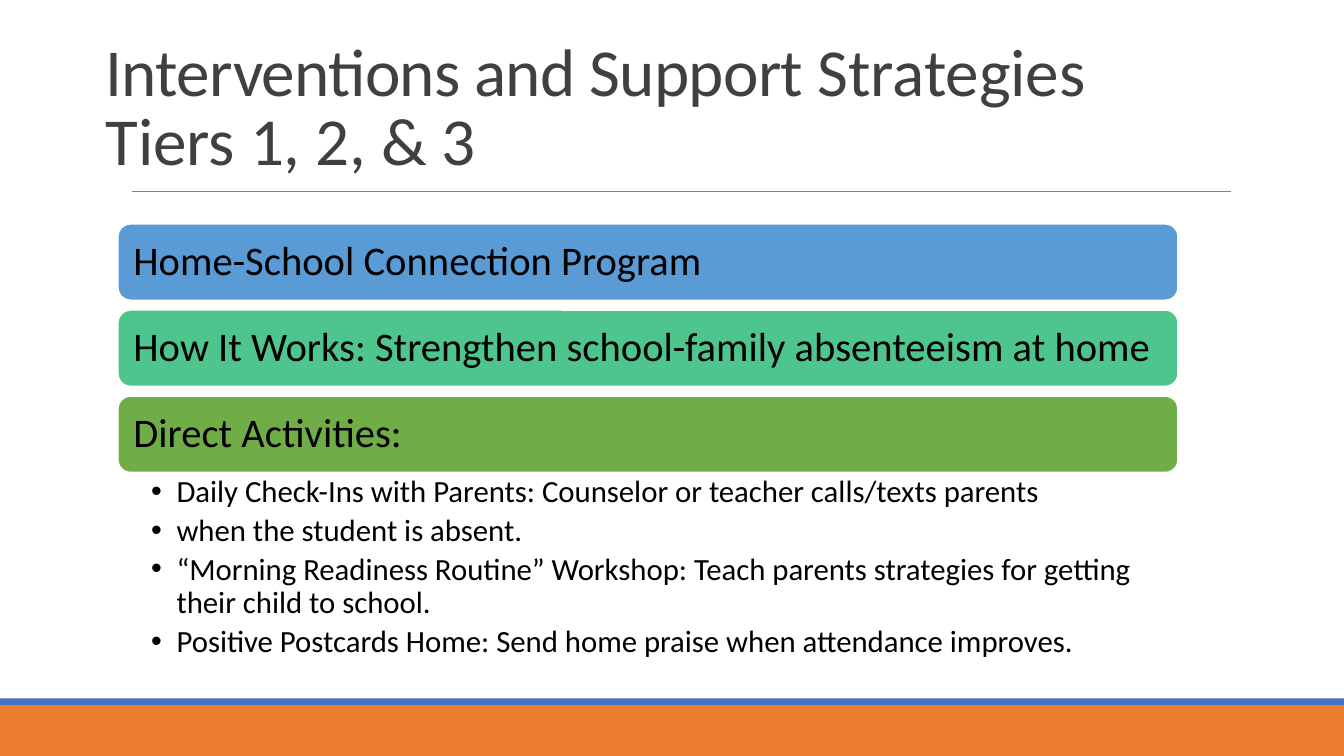
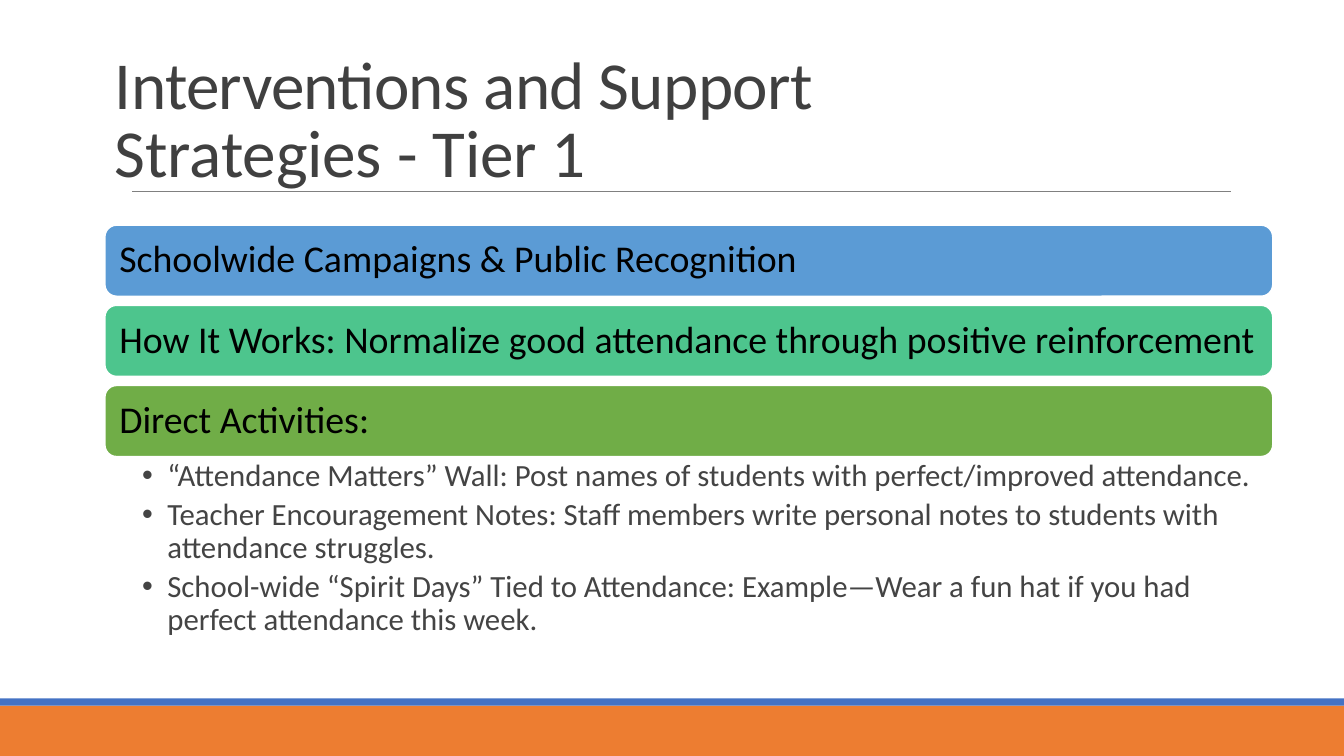
from dataclasses import dataclass

from lxml.etree import SubElement
from pptx import Presentation
from pptx.dml.color import RGBColor
from pptx.enum.shapes import MSO_CONNECTOR as Connector, MSO_SHAPE as Shape
from pptx.enum.text import MSO_ANCHOR as Anchor, MSO_AUTO_SIZE as AutoSize, PP_ALIGN as Align
from pptx.oxml.ns import qn
from pptx.util import Cm, Pt

BLACK = RGBColor(0x00, 0x00, 0x00)
WHITE = RGBColor(0xFF, 0xFF, 0xFF)
TITLE_GREY = RGBColor(0x40, 0x40, 0x40)
TEXT_GREY = RGBColor(0x44, 0x44, 0x44)
RULE_GREY = RGBColor(0x80, 0x80, 0x80)
ORANGE = RGBColor(0xED, 0x7D, 0x31)
BLUE = RGBColor(0x44, 0x72, 0xC4)
BAR_COLORS = (
    RGBColor(0x5B, 0x9B, 0xD5),
    RGBColor(0x4D, 0xC5, 0x8D),
    RGBColor(0x70, 0xAD, 0x47),
)
FONT = "Calibri"
PAGE_WIDTH, PAGE_HEIGHT = Cm(33.87), Cm(19.05)


@dataclass(frozen=True)
class Area:
    left: float
    top: float
    width: float
    height: float

    def lengths(self) -> tuple:
        return Cm(self.left), Cm(self.top), Cm(self.width), Cm(self.height)


@dataclass(frozen=True)
class Strategy:
    title_area: Area
    title_lead: str
    title_tail: str
    first_bar: Area
    bar_step: float
    bar_inset: float
    bar_size: int
    bars: tuple[str, ...]
    list_height: float
    list_inset: float
    list_color: RGBColor
    activities: tuple[str, ...]


STRATEGIES = (
    Strategy(
        title_area=Area(2.41, 0, 26.11, 5.56),
        title_lead="Interventions and Support ",
        title_tail="Strategies\nTiers 1, 2, & 3",
        first_bar=Area(2.97, 5.64, 26.72, 1.93),
        bar_step=2.17,
        bar_inset=0.3,
        bar_size=29,
        bars=(
            "Home-School Connection Program",
            "How It Works: Strengthen school-family absenteeism at home",
            "Direct Activities:",
        ),
        list_height=5,
        list_inset=0.84,
        list_color=BLACK,
        activities=(
            "Daily Check-Ins with Parents: Counselor or teacher calls/texts parents",
            "when the student is absent.",
            "“Morning Readiness Routine” Workshop: Teach parents strategies for getting "
            "their child to school.",
            "Positive Postcards Home: Send home praise when attendance improves.",
        ),
    ),
    Strategy(
        title_area=Area(2.64, 0.91, 26.54, 4.37),
        title_lead="Interventions and Support\n",
        title_tail="Strategies - Tier 1",
        first_bar=Area(2.64, 5.67, 29.44, 1.8),
        bar_step=2.02,
        bar_inset=0.28,
        bar_size=27,
        bars=(
            "Schoolwide Campaigns & Public Recognition",
            "How It Works: Normalize good attendance through positive reinforcement",
            "Direct Activities:",
        ),
        list_height=4.8,
        list_inset=0.94,
        list_color=TEXT_GREY,
        activities=(
            "“Attendance Matters” Wall: Post names of students with perfect/improved attendance.",
            "Teacher Encouragement Notes: Staff members write personal notes to students with "
            "attendance struggles.",
            "School-wide “Spirit Days” Tied to Attendance: Example—Wear a fun hat if you had "
            "perfect attendance this week.",
        ),
    ),
)


def add_text(para, text: str, *, size: int, color: RGBColor, tracking: int = 0) -> None:
    for index, line in enumerate(text.split("\n")):
        if index:
            para.add_line_break()
        if line:
            span = para.add_run()
            span.text = line
            span.font.name = FONT
            span.font.size = Pt(size)
            span.font.color.rgb = color
            if tracking:
                span.font._element.set("spc", str(tracking))


def add_bullet(para) -> None:
    properties = para._p.get_or_add_pPr()
    properties.set("marL", str(Cm(0.64)))
    properties.set("indent", str(Cm(-0.64)))
    SubElement(properties, qn("a:buFont")).set("typeface", "Arial")
    SubElement(properties, qn("a:buChar")).set("char", "•")


def add_block(page, kind: Shape, lengths: tuple, fill: RGBColor):
    block = page.shapes.add_shape(kind, *lengths)
    block.shadow.inherit = False
    block.fill.solid()
    block.fill.fore_color.rgb = fill
    block.line.fill.background()
    return block


def move_decor_to_layout(page) -> None:
    footer = add_block(page, Shape.RECTANGLE, (0, Cm(17.78), PAGE_WIDTH, Cm(1.27)), ORANGE)
    stripe = add_block(page, Shape.RECTANGLE, (0, Cm(17.6), PAGE_WIDTH, Cm(0.18)), BLUE)
    rule = page.shapes.add_connector(Connector.STRAIGHT, Cm(3.33), Cm(4.82), Cm(31.01), Cm(4.82))
    rule.line.color.rgb = RULE_GREY
    rule.line.width = Pt(0.5)
    SubElement(rule.element.spPr, qn("a:effectLst"))
    tree = page.slide_layout.shapes.element
    for index, decor in enumerate((footer, stripe, rule)):
        decor.element.xpath("./*/p:cNvPr")[0].set("id", str(100 + index))
        tree.insert(2 + index, decor.element)


def set_title(page, strategy: Strategy) -> None:
    title = page.shapes.title
    title.left, title.top, title.width, title.height = strategy.title_area.lengths()
    frame = title.text_frame
    frame.auto_size = AutoSize.NONE
    frame.word_wrap = True
    frame.vertical_anchor = Anchor.MIDDLE
    para = frame.paragraphs[0]
    para.alignment = Align.LEFT
    para.line_spacing = 0.85
    add_text(para, strategy.title_lead, size=48, color=TITLE_GREY, tracking=-50)
    add_text(para, strategy.title_tail, size=48, color=TITLE_GREY, tracking=-10)


def add_bars(page, strategy: Strategy) -> None:
    first = strategy.first_bar
    for index, (text, fill) in enumerate(zip(strategy.bars, BAR_COLORS)):
        area = Area(first.left, first.top + index * strategy.bar_step, first.width, first.height)
        bar = add_block(page, Shape.ROUNDED_RECTANGLE, area.lengths(), fill)
        bar.line.color.rgb = WHITE
        bar.line.width = Pt(1.25)
        frame = bar.text_frame
        frame.word_wrap = True
        frame.vertical_anchor = Anchor.MIDDLE
        inset = Cm(strategy.bar_inset)
        frame.margin_left = frame.margin_right = frame.margin_top = frame.margin_bottom = inset
        para = frame.paragraphs[0]
        para.alignment = Align.LEFT
        para.line_spacing = 0.9
        add_text(para, text, size=strategy.bar_size, color=BLACK)


def add_activities(page, strategy: Strategy) -> None:
    first = strategy.first_bar
    top = first.top + (len(strategy.bars) - 1) * strategy.bar_step + first.height
    area = Area(first.left, top, first.width, strategy.list_height)
    frame = page.shapes.add_textbox(*area.lengths()).text_frame
    frame.word_wrap = True
    frame.margin_left, frame.margin_right = Cm(strategy.list_inset), Cm(0.43)
    frame.margin_top = frame.margin_bottom = Cm(0.08)
    for index, text in enumerate(strategy.activities):
        para = frame.add_paragraph() if index else frame.paragraphs[0]
        add_bullet(para)
        para.level = 1
        para.line_spacing = 0.9
        para.space_after = Pt(4)
        add_text(para, text, size=22, color=strategy.list_color)


def main() -> None:
    deck = Presentation()
    deck.slide_width, deck.slide_height = PAGE_WIDTH, PAGE_HEIGHT
    layout = deck.slide_layouts.get_by_name("Title Only")
    for index, strategy in enumerate(STRATEGIES):
        page = deck.slides.add_slide(layout)
        if index == 0:
            move_decor_to_layout(page)
        set_title(page, strategy)
        add_bars(page, strategy)
        add_activities(page, strategy)
    deck.save("out.pptx")


if __name__ == "__main__":
    main()
